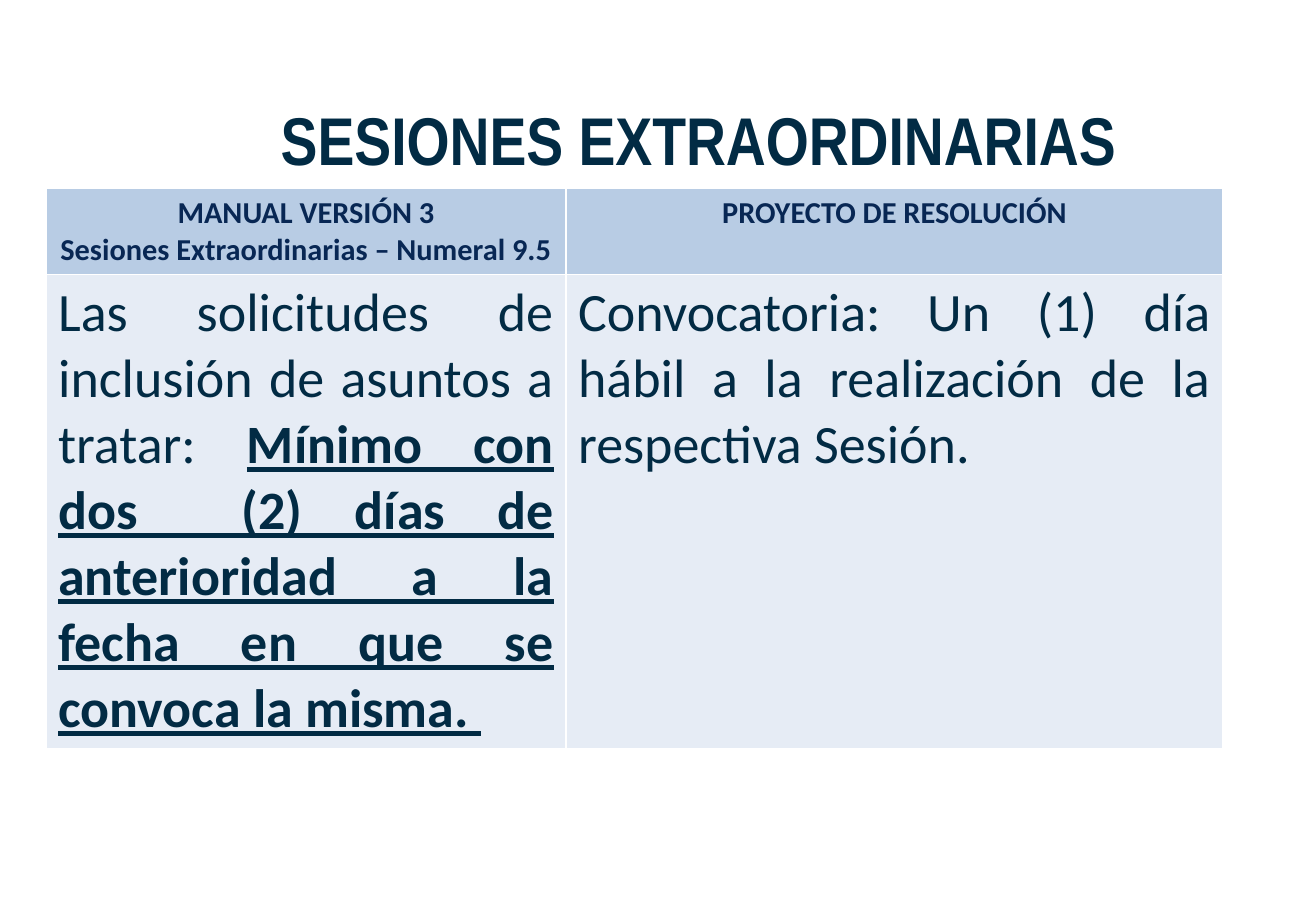
"""Build the slide that compares the rules for extraordinary sessions."""
from pptx import Presentation
from pptx.dml.color import RGBColor
from pptx.enum.text import MSO_ANCHOR, MSO_AUTO_SIZE, PP_ALIGN
from pptx.util import Emu, Pt

PX = 914400 / 121.5
INK = RGBColor(0x02, 0x2B, 0x44)
NAVY = RGBColor(0x08, 0x27, 0x54)
BLUE = RGBColor(0xB8, 0xCC, 0xE4)
PALE = RGBColor(0xE6, 0xEC, 0xF5)


def px(size):
    return Emu(round(size * PX))


def write(para, text, color, form):
    run = para.add_run()
    run.text = text
    run.font.color.rgb = color
    for name, value in form.items():
        setattr(run.font, name, value)


deck = Presentation()
deck.slide_width, deck.slide_height = px(1316), px(911)
slide = deck.slides.add_slide(deck.slide_layouts[5])

title = slide.shapes.title
place = {"left": 139, "top": 120, "width": 1119, "height": 38}
for name, value in place.items():
    setattr(title, name, px(value))
frame = title.text_frame
setup = {"word_wrap": True, "auto_size": MSO_AUTO_SIZE.NONE,
         "vertical_anchor": MSO_ANCHOR.MIDDLE}
for name, value in setup.items():
    setattr(frame, name, value)
para = frame.paragraphs[0]
para.alignment = PP_ALIGN.CENTER
write(para, "SESIONES EXTRAORDINARIAS", INK,
      {"name": "Arial Narrow", "size": Pt(40), "bold": True})

HEAD = {"name": "Calibri", "size": Pt(18), "bold": True}
BODY = {"name": "Calibri", "size": Pt(32), "bold": False}
KEY = BODY | {"bold": True, "underline": True}
rows = [
    (86, BLUE, NAVY, PP_ALIGN.CENTER, [
        [[("MANUAL VERSIÓN 3", HEAD)],
         [("Sesiones Extraordinarias – Numeral 9.5", HEAD)]],
        [[("PROYECTO DE RESOLUCIÓN", HEAD)]],
    ]),
    (473, PALE, INK, PP_ALIGN.JUSTIFY, [
        [[("Las solicitudes de inclusión de asuntos a tratar: ", BODY),
          ("Mínimo con dos  (2) días de anterioridad a la fecha "
           "en que se convoca la misma. ", KEY)]],
        [[("Convocatoria: Un (1) día hábil a la realización "
           "de la respectiva Sesión. ", BODY)]],
    ]),
]
wide = [520, 657]
high = [row[0] for row in rows]
table = slide.shapes.add_table(len(rows), len(wide), px(46), px(188),
                               px(sum(wide)), px(sum(high))).table
for col, width in zip(table.columns, wide):
    col.width = px(width)

for line, (height, fill, color, align, texts) in zip(table.rows, rows):
    line.height = px(height)
    for cell, paras in zip(line.cells, texts):
        cell.fill.solid()
        cell.fill.fore_color.rgb = fill
        frame = cell.text_frame
        for i, runs in enumerate(paras):
            para = frame.add_paragraph() if i else frame.paragraphs[0]
            para.alignment = align
            for text, form in runs:
                write(para, text, color, form)

deck.save("out.pptx")
